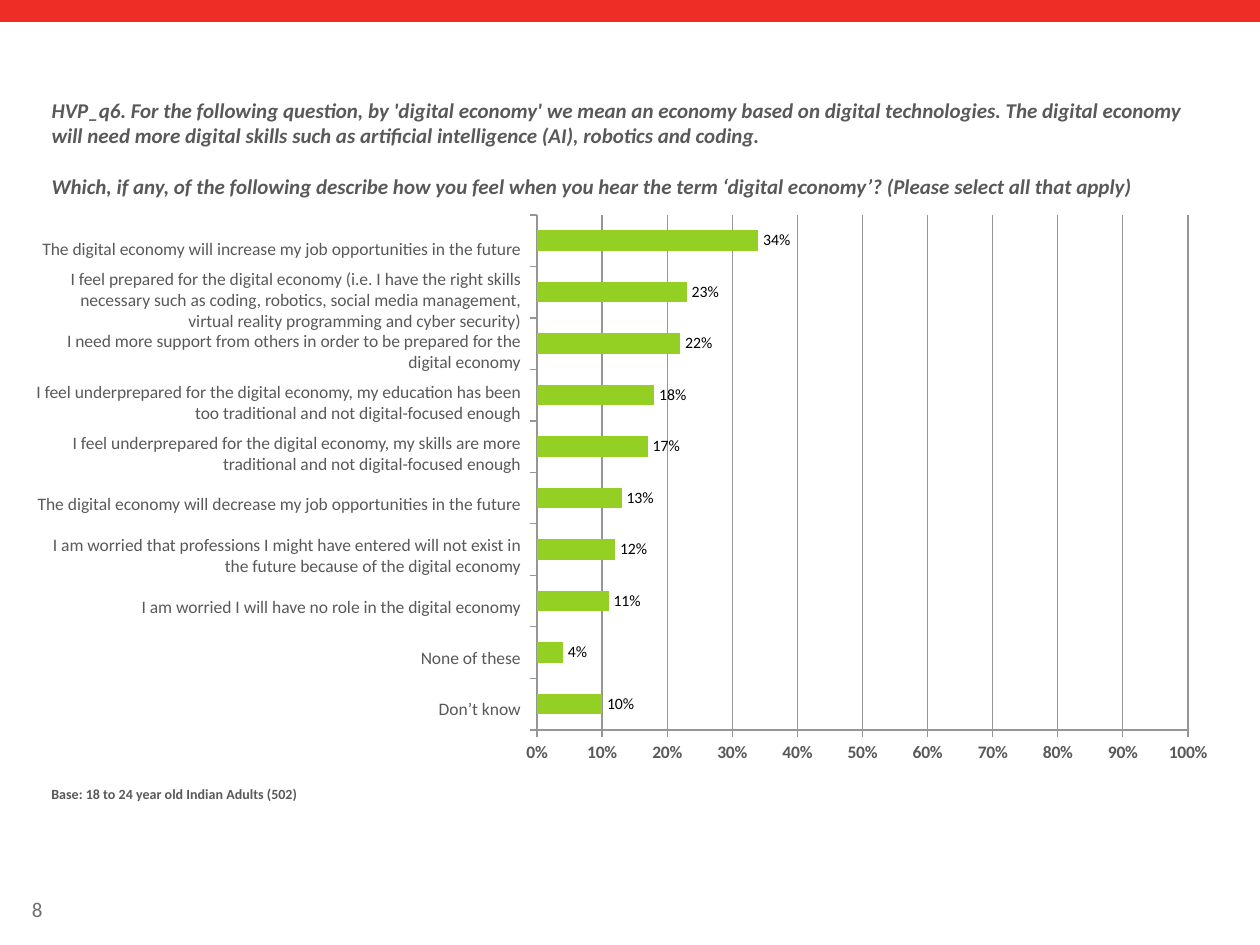
"""Build the survey slide on feelings about the digital economy."""
import pptx
import pptx.chart.data
import pptx.dml.color
import pptx.enum.chart
import pptx.enum.shapes
import pptx.enum.text
import pptx.oxml
import pptx.util
from lxml import etree

RED = pptx.dml.color.RGBColor(0xEE, 0x2D, 0x27)
GREEN = pptx.dml.color.RGBColor(0x93, 0xD0, 0x23)
DARK_GREY = pptx.dml.color.RGBColor(0x59, 0x59, 0x59)
PAGE_GREY = pptx.dml.color.RGBColor(0x6D, 0x6F, 0x71)
GRID_GREY = pptx.dml.color.RGBColor(0x96, 0x96, 0x96)
BLACK = pptx.dml.color.RGBColor(0, 0, 0)

QUESTION = [
    "HVP_q6. For the following question, by 'digital economy' we mean an economy based on digital "
    "technologies. The digital economy will need more digital skills such as artificial "
    "intelligence (AI), robotics and coding.",
    "Which, if any, of the following describe how you feel when you hear the term "
    "‘digital economy’? (Please select all that apply)",
]
ANSWERS = [
    ("The digital economy will increase my job opportunities in the future", 0.34),
    ("I feel prepared for the digital economy (i.e. I have the right skills necessary such as "
     "coding, robotics, social media management, virtual reality programming and cyber security)", 0.23),
    ("I need more support from others in order to be prepared for the digital economy", 0.22),
    ("I feel underprepared for the digital economy, my education has been too traditional and "
     "not digital-focused enough", 0.18),
    ("I feel underprepared for the digital economy, my skills are more traditional and "
     "not digital-focused enough", 0.17),
    ("The digital economy will decrease my job opportunities in the future", 0.13),
    ("I am worried that professions I might have entered will not exist in the future because "
     "of the digital economy", 0.12),
    ("I am worried I will have no role in the digital economy", 0.11),
    ("None of these", 0.04),
    ("Don’t know", 0.10),
]
BASE = "Base: 18 to 24 year old Indian Adults (502)"
PAGE_NUMBER = "8"

SLIDE_SIZE = (1260, 945)
CHART_BOX = (513, 203, 709, 571)
PLOT_BOX = (537, 215, 651, 515)
LABEL_LEFT, LABEL_TOP, LABEL_WIDTH, LABEL_HEIGHT, LABEL_STEP = 20, 223, 513, 51, 51.1


def px(value):
    return pptx.util.Emu(round(value * 914400 / 126))


def set_font(font, size, color, bold=False, italic=False):
    font.name = "Calibri"
    font.size = pptx.util.Pt(size)
    font.color.rgb = color
    font.bold = bold
    font.italic = italic


def fill_text(shape, box, paragraphs, size, color, bold=False, italic=False,
              align=pptx.enum.text.PP_ALIGN.LEFT, anchor=pptx.enum.text.MSO_ANCHOR.TOP, gap=0):
    shape.left, shape.top, shape.width, shape.height = map(px, box)
    frame = shape.text_frame
    frame.word_wrap = True
    frame.auto_size = pptx.enum.text.MSO_AUTO_SIZE.NONE
    frame.vertical_anchor = anchor
    for index, text in enumerate(paragraphs):
        paragraph = frame.add_paragraph() if index else frame.paragraphs[0]
        paragraph.alignment = align
        paragraph.space_before = pptx.util.Pt(gap if index else 0)
        run = paragraph.add_run()
        run.text = text
        set_font(run.font, size, color, bold, italic)


def add_text(slide, box, text, *style, **options):
    shape = slide.shapes.add_textbox(*map(px, box))
    fill_text(shape, box, [text], *style, **options)
    return shape


def set_plot_layout(chart):
    plot_area = chart._chartSpace.chart.plotArea
    for old_layout in plot_area.findall(pptx.oxml.ns.qn("c:layout")):
        plot_area.remove(old_layout)
    layout = etree.Element(pptx.oxml.ns.qn("c:layout"))
    manual = etree.SubElement(layout, pptx.oxml.ns.qn("c:manualLayout"))
    left, top, width, height = CHART_BOX
    settings = [
        ("layoutTarget", "inner"), ("xMode", "edge"), ("yMode", "edge"),
        ("x", round((PLOT_BOX[0] - left) / width, 4)),
        ("y", round((PLOT_BOX[1] - top) / height, 4)),
        ("w", round(PLOT_BOX[2] / width, 4)),
        ("h", round(PLOT_BOX[3] / height, 4)),
    ]
    for name, value in settings:
        etree.SubElement(manual, pptx.oxml.ns.qn("c:" + name), val=str(value))
    plot_area.insert(0, layout)


def style_line(line):
    line.color.rgb = GRID_GREY
    line.width = pptx.util.Pt(0.75)


def add_answer_chart(slide):
    data = pptx.chart.data.CategoryChartData(number_format="0%")
    data.categories = [str(number + 1) for number in range(len(ANSWERS))]
    data.add_series("Series 1", [share for _, share in reversed(ANSWERS)])
    chart = slide.shapes.add_chart(
        pptx.enum.chart.XL_CHART_TYPE.BAR_CLUSTERED, *map(px, CHART_BOX), data).chart
    chart.has_legend = False
    chart.has_title = False
    set_font(chart.font, 10, DARK_GREY)
    set_plot_layout(chart)

    plot = chart.plots[0]
    plot.gap_width = 150
    plot.overlap = -10
    plot.vary_by_categories = False
    bars = plot.series[0].format.fill
    bars.solid()
    bars.fore_color.rgb = GREEN
    plot.has_data_labels = True
    labels = plot.data_labels
    labels.show_value = True
    labels.number_format = "0%"
    labels.number_format_is_linked = False
    labels.position = pptx.enum.chart.XL_LABEL_POSITION.OUTSIDE_END
    set_font(labels.font, 9, BLACK)

    for axis in (chart.category_axis, chart.value_axis):
        axis.major_tick_mark = pptx.enum.chart.XL_TICK_MARK.OUTSIDE
        axis.minor_tick_mark = pptx.enum.chart.XL_TICK_MARK.NONE
        style_line(axis.format.line)
    chart.category_axis.tick_label_position = pptx.enum.chart.XL_TICK_LABEL_POSITION.NONE
    value_axis = chart.value_axis
    value_axis.minimum_scale, value_axis.maximum_scale, value_axis.major_unit = 0, 1, 0.1
    value_axis.tick_label_position = pptx.enum.chart.XL_TICK_LABEL_POSITION.LOW
    value_axis.tick_labels.number_format = "0%"
    value_axis.tick_labels.number_format_is_linked = False
    set_font(value_axis.tick_labels.font, 10, DARK_GREY, bold=True)
    value_axis.has_major_gridlines = True
    style_line(value_axis.major_gridlines.format.line)


def main():
    presentation = pptx.Presentation()
    presentation.slide_width, presentation.slide_height = map(px, SLIDE_SIZE)
    slide = presentation.slides.add_slide(presentation.slide_layouts[5])
    middle = pptx.enum.text.MSO_ANCHOR.MIDDLE

    band = slide.shapes.add_shape(
        pptx.enum.shapes.MSO_SHAPE.RECTANGLE, 0, 0, px(SLIDE_SIZE[0]), px(22))
    band.shadow.inherit = False
    band.fill.solid()
    band.fill.fore_color.rgb = RED
    band.line.fill.background()

    page = add_text(slide, (20, 890, 97, 38), PAGE_NUMBER, 12, PAGE_GREY, anchor=middle)
    page.text_frame.margin_left = px(12)
    fill_text(slide.shapes.title, (39, 91, 1183, 113), QUESTION, 12, DARK_GREY,
              bold=True, italic=True, gap=14.6)
    add_answer_chart(slide)
    for row, (answer, _) in enumerate(ANSWERS):
        box = (LABEL_LEFT, LABEL_TOP + row * LABEL_STEP, LABEL_WIDTH, LABEL_HEIGHT)
        add_text(slide, box, answer, 10, DARK_GREY,
                 align=pptx.enum.text.PP_ALIGN.RIGHT, anchor=middle)
    add_text(slide, (39, 779, 1183, 54), BASE, 8, DARK_GREY, bold=True)
    presentation.save("out.pptx")


if __name__ == "__main__":
    main()
